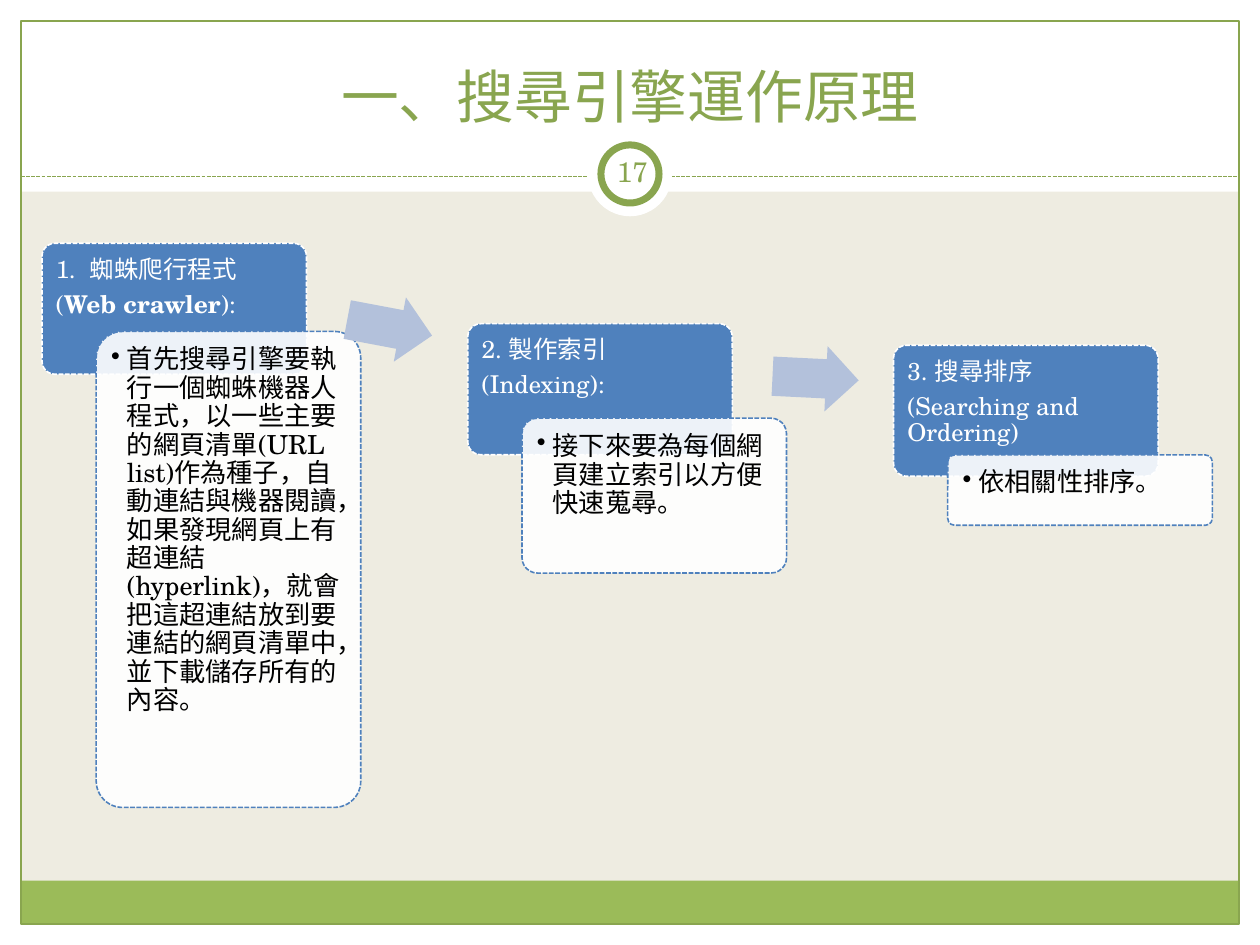
from pptx import Presentation
from pptx import util as u
from pptx.dml.color import RGBColor
from pptx.enum import dml, shapes, text
from pptx.oxml.ns import qn
from lxml import etree

FONT = "TeX Gyre Schola"
HUES = {"back": "EEECE1", "white": "FFFFFF", "green": "9BBB59", "dark": "89A54F",
        "blue": "4F81BD", "arrow": "B3C1DB", "black": "000000"}
TITLE = "一、搜尋引擎運作原理"
PAGE = "17"
STEPS = [
    {"head": [["1.  蜘蛛爬行程式"], ["(", "Web crawler", "):"]], "bold": "Web crawler",
     "body": "首先搜尋引擎要執行一個蜘蛛機器人程式，以一些主要的網頁清單(URL list)作為種子，"
             "自動連結與機器閱讀，如果發現網頁上有超連結(hyperlink)，"
             "就會把這超連結放到要連結的網頁清單中，並下載儲存所有的內容。",
     "top": 139, "low": 189.4, "tall": 272},
    {"head": [["2. 製作索引"], ["(Indexing):"]], "bold": None,
     "body": "接下來要為每個網頁建立索引以方便快速蒐尋。",
     "top": 185, "low": 239, "tall": 88.5},
    {"head": [["3. 搜尋排序"], ["(Searching and Ordering)"]], "bold": None,
     "body": "依相關性排序。",
     "top": 197.3, "low": 260, "tall": 40.2},
]
ARROWS = [(198, 168.5, 10.7), (441.4, 197.5, 2.8)]
BANDS = [(0, 528, 720, 12, "white"), (0, 0, 720, 109.5, "white"), (0, 0, 12, 540, "white"),
         (708, 0, 12, 540, "white"), (12, 503.3, 695.5, 24.5, "green")]
LEFT, PITCH, WIDE, SHIFT = 24, 243.3, 151.2, 31
KIND = shapes.MSO_SHAPE

deck = Presentation()
deck.slide_width, deck.slide_height = u.Pt(720), u.Pt(540)
slide = deck.slides.add_slide(deck.slide_layouts[5])


def hue(key):
    return RGBColor.from_string(HUES[key])


def pts(*nums):
    return [u.Pt(n) for n in nums]


def stroke(line, key, width, dash):
    line.color.rgb = hue(key)
    line.width = u.Pt(width)
    if dash:
        line.dash_style = dml.MSO_LINE.SQUARE_DOT


def shape(kind, box, fill=None, line=None, width=0.75, dash=False):
    item = slide.shapes.add_shape(kind, *pts(*box))
    item.shadow.inherit = False
    if fill:
        item.fill.solid()
        item.fill.fore_color.rgb = hue(fill)
    else:
        item.fill.background()
    if line:
        stroke(item.line, line, width, dash)
    else:
        item.line.fill.background()
    return item


def card(box, fill, line):
    item = shape(KIND.ROUNDED_RECTANGLE, box, fill, line, 0.9, True)
    item.adjustments[0] = 0.1
    return item


def inset(frame, left, top, right, bottom):
    frame.word_wrap = True
    frame.margin_left, frame.margin_top, frame.margin_right, frame.margin_bottom = pts(
        left, top, right, bottom)


def style(run, size, key):
    run.font.size, run.font.name = u.Pt(size), FONT
    run.font.color.rgb = hue(key)


def write(box, lines, size, key, pad, after=0, bold=None):
    frame = slide.shapes.add_textbox(*pts(*box)).text_frame
    inset(frame, *pad)
    for n, line in enumerate(lines):
        para = frame.add_paragraph() if n else frame.paragraphs[0]
        para.line_spacing, para.space_after = 0.9, u.Pt(after)
        for part in line:
            run = para.add_run()
            run.text = part
            style(run, size, key)
            if part == bold:
                run.font.bold = True
    return frame


def bullet(para):
    props = para._p.get_or_add_pPr()
    props.set("marL", str(u.Pt(9)))
    props.set("indent", str(-u.Pt(9)))
    etree.SubElement(props, qn("a:buChar")).set("char", "•")


slide.background.fill.solid()
slide.background.fill.fore_color.rgb = hue("back")
for *box, key in BANDS:
    shape(KIND.RECTANGLE, box, key)
shape(KIND.RECTANGLE, (12, 12, 696, 516), None, "dark")
rule = slide.shapes.add_connector(shapes.MSO_CONNECTOR.STRAIGHT, *pts(12, 100.8, 708, 100.8))
stroke(rule.line, "dark", 0.75, True)
etree.SubElement(rule._element.spPr, qn("a:effectLst"))
shape(KIND.OVAL, (336, 75.6, 48, 48), "white")
shape(KIND.OVAL, (343.4, 82.8, 33.2, 33.2), "white", "dark", 4)

title = slide.shapes.title
title.left, title.top, title.width, title.height = pts(24, 18, 672, 60)
slide.shapes._spTree.append(title._element)
title.text_frame.text = TITLE
title.text_frame.vertical_anchor = text.MSO_ANCHOR.BOTTOM
title.text_frame.paragraphs[0].alignment = text.PP_ALIGN.CENTER
style(title.text_frame.paragraphs[0].runs[0], 33, "dark")

page = write((343.4, 80.6, 36, 34.6), [[PAGE]], 16, "dark", (3.6,) * 4)
page.vertical_anchor = text.MSO_ANCHOR.MIDDLE
page.paragraphs[0].alignment = text.PP_ALIGN.CENTER
page.paragraphs[0].line_spacing = 1.0

for n, step in enumerate(STEPS):
    x = LEFT + n * PITCH
    card((x, step["top"], WIDE, 74.9), "blue", "white")
    write((x, step["top"], WIDE, 49.7), step["head"], 14, "white",
          (7.9, 7.9, 7.9, 4.3), 4.9, step["bold"])
    box = (x + SHIFT, step["low"], WIDE, step["tall"])
    panel = card(box, "white", "blue")
    tint = panel._element.spPr.find(qn("a:solidFill"))[0]
    etree.SubElement(tint, qn("a:alpha")).set("val", "90000")
    bullet(write(box, [[step["body"]]], 15, "black", (8.5,) * 4, 2.25).paragraphs[0])
    if n < len(ARROWS):
        left, top, turn = ARROWS[n]
        arrow = shape(KIND.RIGHT_ARROW, (left, top, 49.3, 37.4), "arrow")
        arrow.adjustments[0], arrow.adjustments[1] = 0.6, 0.5
        arrow.rotation = turn

deck.save("out.pptx")
